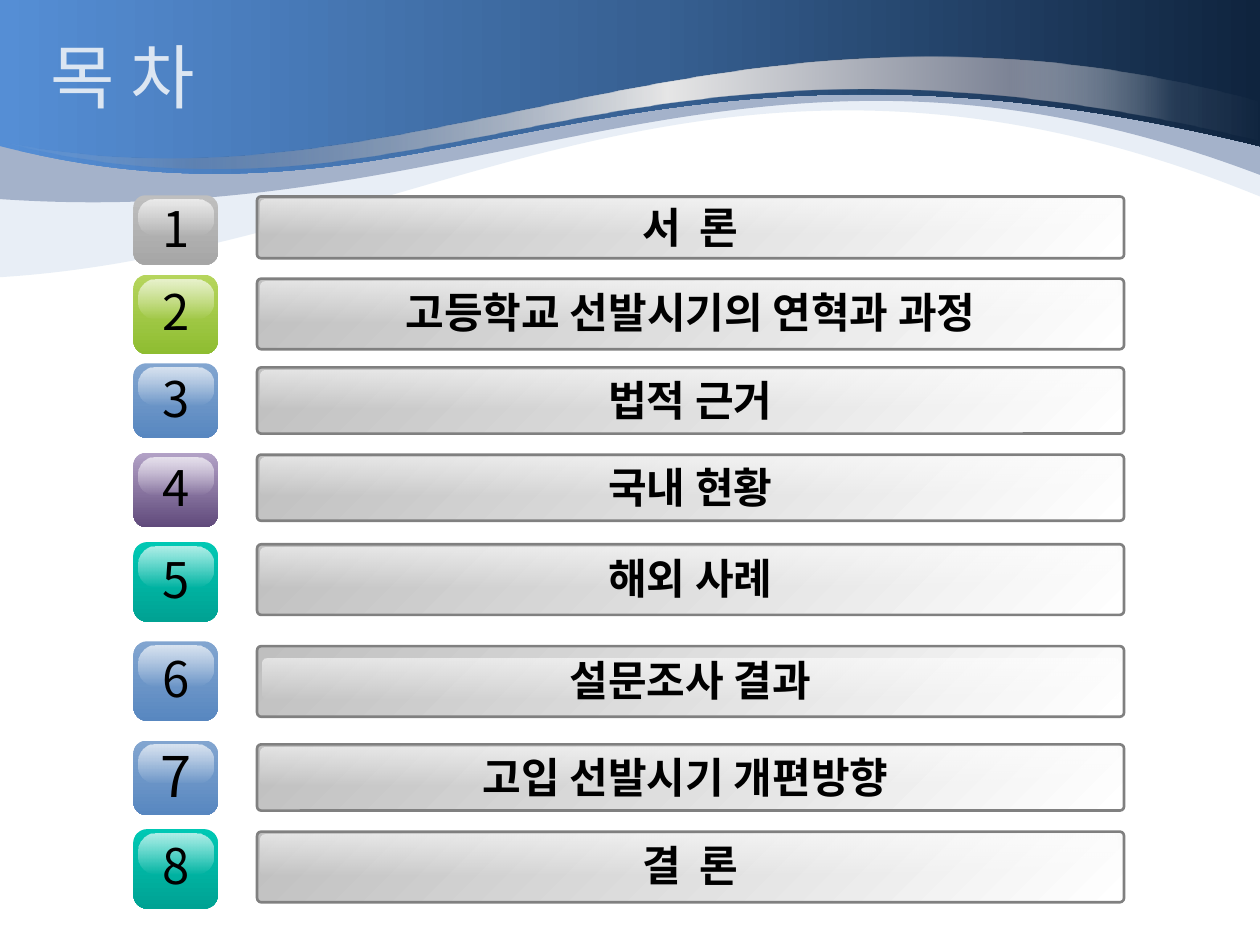
from lxml.etree import SubElement
from pptx import Presentation
from pptx.dml.color import RGBColor
from pptx.enum.shapes import MSO_SHAPE
from pptx.enum.text import MSO_ANCHOR, PP_ALIGN
from pptx.oxml.ns import qn
from pptx.util import Pt

FONT = "Noto Sans CJK KR"
COLORS = {
    "black": "000000", "white": "FFFFFF", "title": "DCE6F2", "border": "808080",
    "silver": "BFBFBF", "gray": "A6A6A6", "pale": "4F81BD", "deep": "002060",
    "sky": "558ED5", "ocean": "376092", "navy": "0F243E",
    "shine": "E6E6E6", "steel": "7D8496",
    "lime": "B6D55D", "green": "8EBD31", "light_blue": "82A5D0", "blue": "5887C0",
    "lilac": "B3A2C7", "purple": "604A7B", "aqua": "00C8B4", "teal": "00A293",
}
GRAY, GREEN, BLUE = ("silver", "gray"), ("lime", "green"), ("light_blue", "blue")
PURPLE, TEAL = ("lilac", "purple"), ("aqua", "teal")

SHORT, MEDIUM, TALL = 39.6, 42.5, 45.4
# Label, badge colours, badge top, badge height, bar top
ROWS = [
    ("서  론", GRAY, 111.6, SHORT, 112.3),
    ("고등학교 선발시기의 연혁과 과정", GREEN, 157, TALL, 159.2),
    ("법적 근거", BLUE, 207.6, MEDIUM, 210),
    ("국내 현황", PURPLE, 258.7, MEDIUM, 259.8),
    ("해외 사례", TEAL, 309.8, TALL, 311),
    ("설문조사 결과", BLUE, 366.5, TALL, 369.2),
    ("고입 선발시기 개편방향 ", BLUE, 423.2, MEDIUM, 425.4),
    ("결  론", TEAL, 473.8, TALL, 475.2),
]


def color(name):
    """Return the named colour as an RGB value."""
    return RGBColor.from_string(COLORS[name])


def fill_gradient(shape, stops, angle):
    """Fill a shape with (position, colour, opacity) stops at a clockwise angle."""
    shape.fill.gradient()
    gradient = shape._element.spPr.find(qn("a:gradFill"))
    for child in list(gradient):
        gradient.remove(child)
    stop_list = SubElement(gradient, qn("a:gsLst"))
    for position, name, opacity in stops:
        stop = SubElement(stop_list, qn("a:gs"), pos=str(position * 1000))
        value = SubElement(stop, qn("a:srgbClr"), val=COLORS[name])
        SubElement(value, qn("a:alpha"), val=str(opacity * 1000))
    SubElement(gradient, qn("a:lin"), ang=str(angle * 60000), scaled="0")


def fill_solid(shape, name, opacity):
    """Fill a shape with one translucent colour."""
    shape.fill.solid()
    shape.fill.fore_color.rgb = color(name)
    value = shape._element.spPr.find(qn("a:solidFill")).find(qn("a:srgbClr"))
    SubElement(value, qn("a:alpha"), val=str(opacity * 1000))


def add_wave(slide, points, curve_count=1):
    """Add a closed outline whose first segments are cubic curves."""
    start, *others = [(Pt(x), Pt(y)) for x, y in points]
    builder = slide.shapes.build_freeform(*start)
    builder.add_line_segments(others, close=True)
    wave = builder.convert_to_shape()
    wave.shadow.inherit = False
    wave.line.fill.background()
    lines = list(wave._element.spPr.iter(qn("a:lnTo")))
    for first in range(0, curve_count * 3, 3):
        controls = lines[first:first + 3]
        curve = controls[0].makeelement(qn("a:cubicBezTo"))
        controls[0].addprevious(curve)
        for line in controls:
            curve.append(line[0])
            line.getparent().remove(line)
    return wave


def add_header(slide):
    """Draw the layered waves across the top."""
    pale = add_wave(slide, [(720, 112.3), (407.5, -15.1), (239.8, 143.3), (0, 158.4),
                            (0, 28.8), (720, 28.8)])
    fill_solid(pale, "pale", 13)
    deep = add_wave(slide, [(720, 100), (428.4, -10.8), (281.5, 133.2), (0, 113.8),
                            (0, 17.3), (720, 17.3)])
    fill_solid(deep, "deep", 29)
    main_wave = add_wave(slide, [(720, 83.5), (349.2, -7.9), (249.8, 146.9), (0, 83.5),
                                 (0, -0.7), (720, -0.7)])
    fill_gradient(main_wave, [(0, "sky", 100), (52, "ocean", 100), (100, "navy", 100)], 0)
    ribbon = add_wave(slide, [(720, 80.6), (349.2, -10.1), (249.8, 144), (0, 80.6),
                              (239, 128.9), (409.7, -25.9), (720, 58.3)], curve_count=2)
    fill_gradient(ribbon, [(0, "shine", 0), (15, "steel", 34), (53, "shine", 100),
                           (80, "steel", 100), (93, "shine", 8), (100, "white", 0)], 0)


def add_panel(shapes, box, stops, angle, corner, bordered=False):
    """Add a rounded rectangle with a gradient fill."""
    panel = shapes.add_shape(MSO_SHAPE.ROUNDED_RECTANGLE, *map(Pt, box))
    panel.shadow.inherit = False
    panel.adjustments[0] = corner
    fill_gradient(panel, stops, angle)
    if bordered:
        panel.line.color.rgb = color("border")
        panel.line.width = Pt(1.5)
    else:
        panel.line.fill.background()


def add_text(shapes, box, text, size, name="black", bold=False, wrap=True,
             alignment=PP_ALIGN.CENTER):
    """Add one line of vertically centred text."""
    frame = shapes.add_textbox(*map(Pt, box)).text_frame
    frame.word_wrap = wrap
    frame.vertical_anchor = MSO_ANCHOR.MIDDLE
    paragraph = frame.paragraphs[0]
    paragraph.alignment = alignment
    before, gap, after = text.partition("  ")
    for part in filter(None, (before, gap[:1], after)):
        run = paragraph.add_run()
        run.text = part
        run.font.size = Pt(size)
        run.font.bold = bold
        run.font.color.rgb = color(name)
        run.font.name = FONT
        properties = run._r.get_or_add_rPr()
        SubElement(properties, qn("a:ea"), typeface=FONT)
        if part == " ":
            properties.set("spc", "540")


def add_row(slide, number, label, badge_colors, badge_top, height, bar_top):
    """Add a numbered badge and its glossy label bar as one group."""
    shapes = slide.shapes.add_group_shape().shapes
    start, end = badge_colors
    gloss_top, gloss_left = (7.2, 149.8) if number == 6 else (1.6, 149)
    add_panel(shapes, (76.3, badge_top, 48.2, height),
              [(0, start, 100), (100, end, 100)], 90, 0.17)
    add_panel(shapes, (79.2, badge_top + 2.5, 42.5, height / 2),
              [(0, "white", 70), (100, "white", 0)], 90, 0.43)
    add_text(shapes, (82.1, badge_top + 3, 36.7, height * 0.78), str(number),
             32 if number == 7 else 28)
    add_panel(shapes, (146.9, bar_top, 495.4, height * 0.89),
              [(0, "silver", 100), (100, "white", 100)], 45, 0.06, bordered=True)
    add_panel(shapes, (gloss_left, bar_top + gloss_top, 489.6, height / 2),
              [(0, "white", 58), (100, "white", 0)], 90, 0.11)
    add_text(shapes, (173.5, bar_top + 6.5, 442.1, height * 0.55), label, 24,
             bold=True, wrap=False)


def main():
    """Build the contents slide and save it."""
    presentation = Presentation()
    presentation.slide_width, presentation.slide_height = Pt(720), Pt(540)
    slide = presentation.slides.add_slide(presentation.slide_layouts[6])
    add_header(slide)
    add_text(slide.shapes, (21.6, 15.1, 697.7, 56.2), "목 차", 40, "title",
             alignment=PP_ALIGN.LEFT)
    for number, row in enumerate(ROWS, 1):
        add_row(slide, number, *row)
    presentation.save("out.pptx")


if __name__ == "__main__":
    main()
